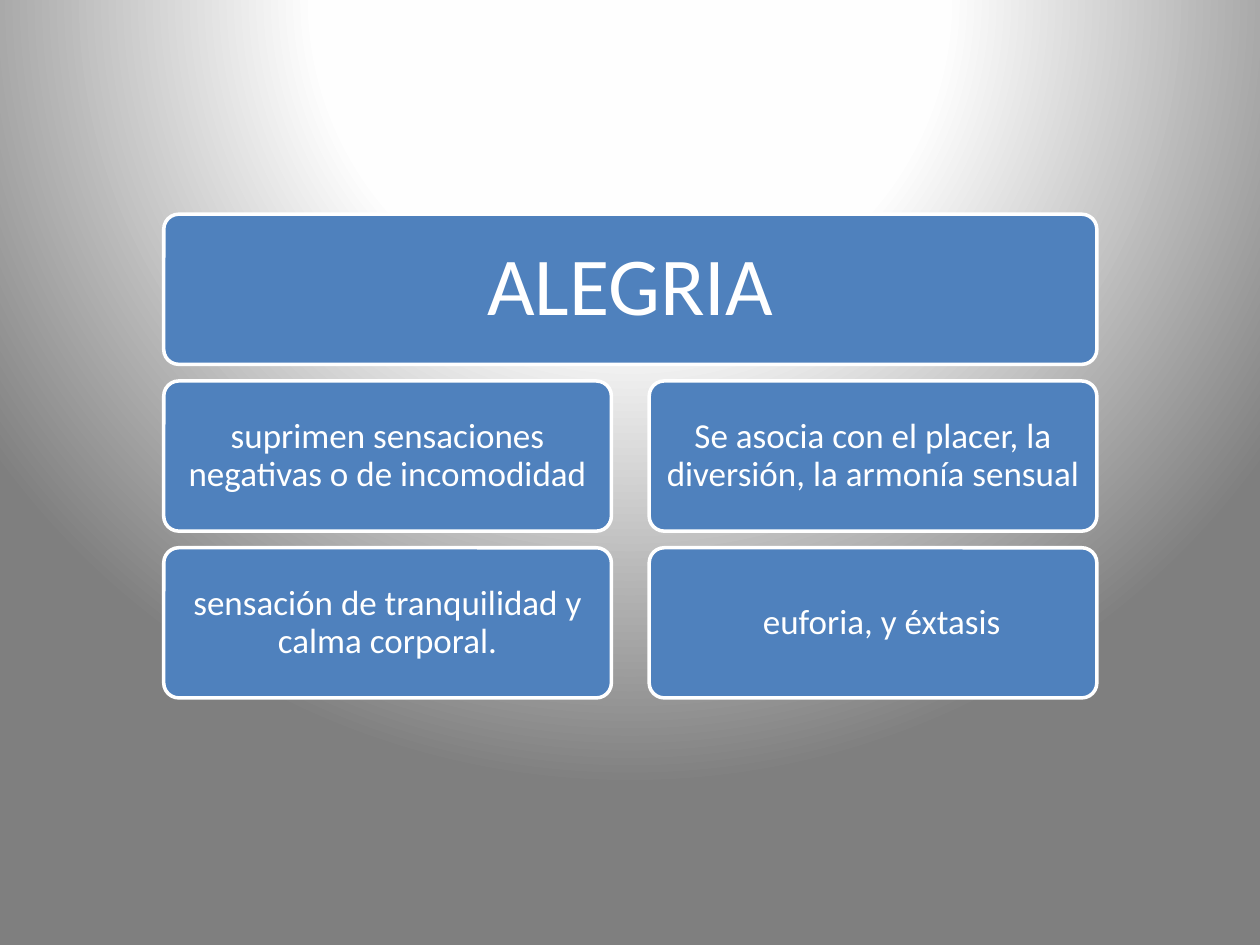
from pptx import Presentation
from pptx.dml.color import RGBColor
from pptx.enum.shapes import MSO_SHAPE as Shape
from pptx.enum.text import MSO_ANCHOR as Anchor, PP_ALIGN as Align
from pptx.oxml import parse_xml
from pptx.oxml.ns import nsdecls
from pptx.util import Pt

BLUE = RGBColor(0x4F, 0x81, 0xBD)
WHITE = RGBColor(0xFF, 0xFF, 0xFF)
STOPS = [(0, WHITE), (40, RGBColor(0xFE, 0xFE, 0xFE)),
         (100, RGBColor(0x7F, 0x7F, 0x7F))]

TITLE = "ALEGRIA"
# Each row holds (text, extra left inset) pairs.
ROWS = [
    [("suprimen sensaciones negativas o de incomodidad", 0),
     ("Se asocia con el placer, la diversión, la armonía sensual", 0)],
    [("sensación de tranquilidad y calma corporal.", 0),
     ("euforia, y éxtasis", 10)],
]

LEFT, TOP = 93.6, 122.4
CELL_W, CELL_H = 255.8, 85.8
GAP_X, GAP_Y = 21.6, 9.5
FULL_W = 2 * CELL_W + GAP_X


def paint_back(slide):
    """Give the slide a circular gradient centred above its top edge."""
    slide.background.fill.solid()
    props = slide.element.xpath("p:cSld/p:bg/p:bgPr")[0]
    stops = "".join(
        f'<a:gs pos="{pos * 1000}"><a:srgbClr val="{color}"/></a:gs>'
        for pos, color in STOPS)
    props.replace(props[0], parse_xml(
        f'<a:gradFill {nsdecls("a")} rotWithShape="1">'
        f'<a:gsLst>{stops}</a:gsLst><a:path path="circle">'
        '<a:fillToRect l="50000" t="-80000" r="50000" b="180000"/>'
        '</a:path></a:gradFill>'))


def add_box(slide, text, row, col, width, size, inset, extra=0):
    box = slide.shapes.add_shape(
        Shape.ROUNDED_RECTANGLE,
        Pt(LEFT + col * (CELL_W + GAP_X)), Pt(TOP + row * (CELL_H + GAP_Y)),
        Pt(width), Pt(CELL_H))
    box.adjustments[0] = 0.1
    box.shadow.inherit = False
    box.fill.solid()
    box.fill.fore_color.rgb = BLUE
    box.line.color.rgb = WHITE
    box.line.width = Pt(2)

    frame = box.text_frame
    frame.word_wrap = True
    frame.vertical_anchor = Anchor.MIDDLE
    frame.margin_left = Pt(inset + extra)
    frame.margin_right = frame.margin_top = frame.margin_bottom = Pt(inset)
    para = frame.paragraphs[0]
    para.text = text
    para.alignment = Align.CENTER
    para.line_spacing = 0.9
    para.font.name = "Calibri"
    para.font.size = Pt(size)
    para.font.color.rgb = WHITE


def main():
    deck = Presentation()
    deck.slide_width, deck.slide_height = Pt(720), Pt(540)
    slide = deck.slides.add_slide(deck.slide_layouts[6])
    paint_back(slide)
    add_box(slide, TITLE, 0, 0, FULL_W, 47, 14.4)
    for row, cells in enumerate(ROWS, 1):
        for col, (text, extra) in enumerate(cells):
            add_box(slide, text, row, col, CELL_W, 20, 5.7, extra)
    deck.save("out.pptx")


if __name__ == "__main__":
    main()
